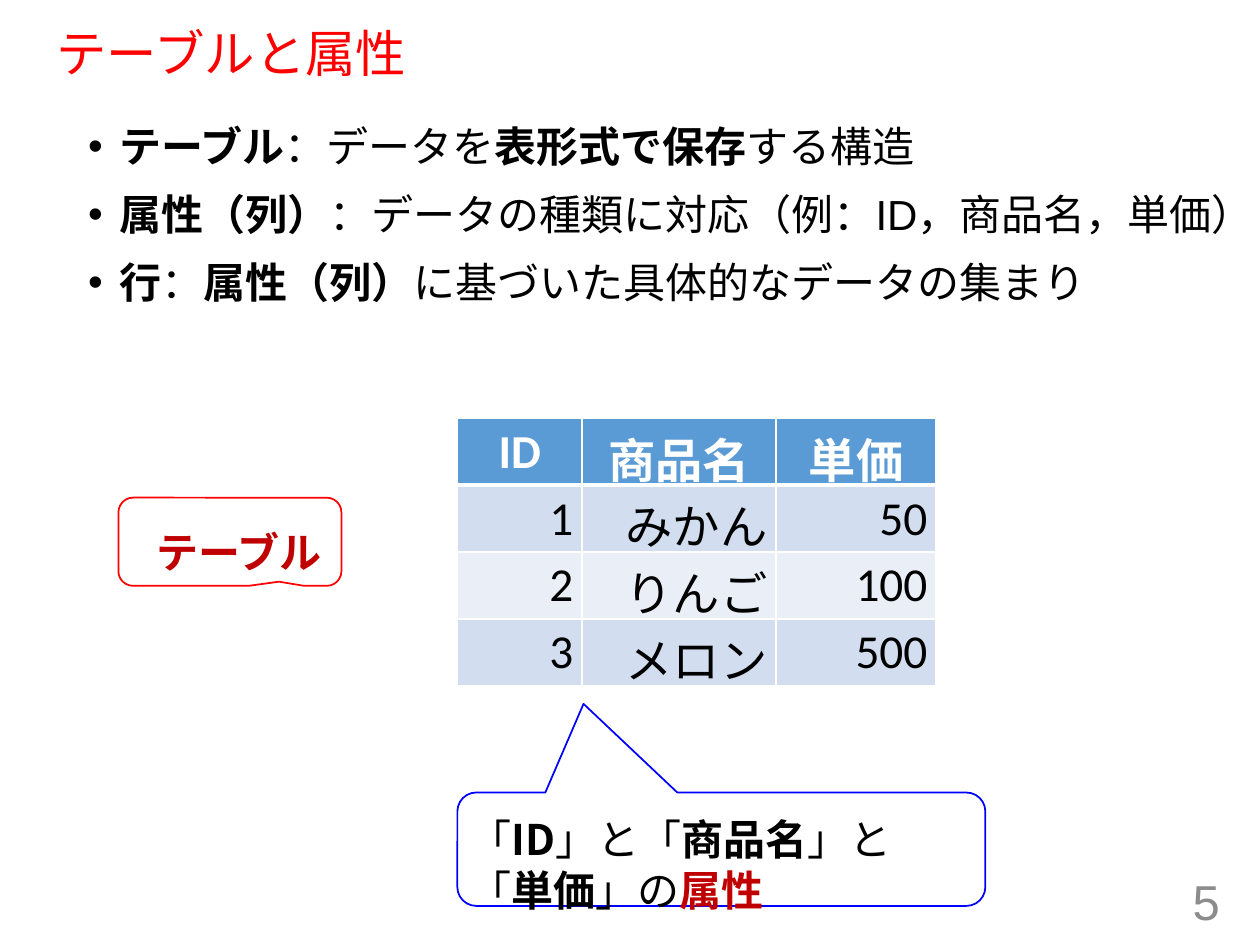
import pptx
import pptx.util
import pptx.dml.color
import pptx.enum.shapes
import pptx.enum.text
import pptx.oxml
import pptx.oxml.ns
import lxml.etree

Inches = pptx.util.Inches
Pt = pptx.util.Pt
ALIGN = pptx.enum.text.PP_ALIGN
ANCHOR = pptx.enum.text.MSO_ANCHOR
qn = pptx.oxml.ns.qn

COLORS = {
    "red": "FF0000", "dark red": "C00000", "blue": "0000FF", "black": "000000",
    "white": "FFFFFF", "gray": "8C8C8C",
    "header": "5B9BD5", "odd row": "D2DEEF", "even row": "EAEFF7",
}
CJK = "Noto Sans CJK JP"

# Each paragraph is a list of (text, bold) or (text, bold, color) runs.
TITLE = [[("テーブルと属性", False)]]
BULLETS = [
    [("テーブル", True), ("：データを", False), ("表形式で保存", True), ("する構造", False)],
    [("属性（列）", True), ("：データの種類に対応（例：ID，商品名，単価）", False)],
    [("行", True), ("：", False), ("属性（列）", True),
     ("に基づいた具体的なデータの集まり", False)],
]
TABLE_LABEL = [[("テーブル", True, "dark red")]]
ATTRIBUTE_LABEL = [[
    ("「", False), ("ID", True), ("」と「", False), ("商品名", True), ("」と「", False),
    ("単価", True), ("」の", False), ("属性", True, "dark red"),
]]
PAGE_NUMBER = [[("5", False)]]
PRODUCTS = [
    ("ID", "商品名", "単価"),
    ("1", "みかん", "50"),
    ("2", "りんご", "100"),
    ("3", "メロン", "500"),
]
COLUMN_WIDTHS = (0.99, 1.54, 1.27)
ROW_HEIGHT = 0.53


def rgb(name):
    return pptx.dml.color.RGBColor.from_string(COLORS[name])


def add_text(slide, box, paragraphs, size, font="Arial", color="black",
             anchor=ANCHOR.TOP, align=ALIGN.LEFT):
    frame = slide.shapes.add_textbox(*map(Inches, box)).text_frame
    frame.word_wrap = True
    frame.vertical_anchor = anchor
    for index, runs in enumerate(paragraphs):
        paragraph = frame.add_paragraph() if index else frame.paragraphs[0]
        paragraph.alignment = align
        paragraph.font.size = Pt(size)
        paragraph.font.name = font
        for text, bold, *run_color in runs:
            run = paragraph.add_run()
            run.text = text
            run.font.size = Pt(size)
            run.font.name = font
            run.font.bold = bold
            run.font.color.rgb = rgb(run_color[0] if run_color else color)
            east_asian = lxml.etree.SubElement(run.font._element, qn("a:ea"))
            east_asian.set("typeface", font)
    return frame


def add_bullet(paragraph):
    paragraph.space_before = Pt(10)
    properties = paragraph._p.get_or_add_pPr()
    properties.set("marL", str(Inches(0.25)))
    properties.set("indent", str(-Inches(0.25)))
    bullet_font = lxml.etree.Element(qn("a:buFont"), typeface="Arial")
    bullet = lxml.etree.Element(qn("a:buChar"), char="•")
    position = list(properties).index(properties.find(qn("a:spcBef"))) + 1
    properties[position:position] = [bullet_font, bullet]


def add_callout(slide, box, pointer, color):
    callout = slide.shapes.add_shape(
        pptx.enum.shapes.MSO_SHAPE.ROUNDED_RECTANGULAR_CALLOUT, *map(Inches, box))
    for index, value in enumerate((*pointer, 0.167)):
        callout.adjustments[index] = value
    callout.shadow.inherit = False
    callout.fill.background()
    callout.line.color.rgb = rgb(color)
    callout.line.width = Pt(1)


def add_borders(cell, bottom):
    properties = cell._tc.get_or_add_tcPr()
    for index, (side, width) in enumerate(
            (("lnL", 1), ("lnR", 1), ("lnT", 1), ("lnB", bottom))):
        line = lxml.etree.Element(qn("a:" + side), w=str(Pt(width)))
        fill = lxml.etree.SubElement(line, qn("a:solidFill"))
        lxml.etree.SubElement(fill, qn("a:srgbClr"), val=COLORS["white"])
        properties.insert(index, line)


def add_product_table(slide, left, top):
    table = slide.shapes.add_table(
        len(PRODUCTS), len(COLUMN_WIDTHS), Inches(left), Inches(top),
        Inches(sum(COLUMN_WIDTHS)), Inches(ROW_HEIGHT * len(PRODUCTS))).table
    for column, width in zip(table.columns, COLUMN_WIDTHS):
        column.width = Inches(width)
    for row_index, values in enumerate(PRODUCTS):
        header = row_index == 0
        fill = "header" if header else ("odd row" if row_index % 2 else "even row")
        table.rows[row_index].height = Inches(ROW_HEIGHT)
        for column_index, value in enumerate(values):
            cell = table.cell(row_index, column_index)
            cell.text = value
            cell.margin_left = cell.margin_right = Inches(0.07)
            cell.margin_top = cell.margin_bottom = Inches(0.04)
            cell.fill.solid()
            cell.fill.fore_color.rgb = rgb(fill)
            add_borders(cell, bottom=3 if header or row_index == 0 else 1)
            paragraph = cell.text_frame.paragraphs[0]
            paragraph.alignment = ALIGN.CENTER if header else ALIGN.RIGHT
            paragraph.font.size = Pt(27)
            paragraph.font.name = "Calibri"
            paragraph.font.bold = header
            paragraph.font.color.rgb = rgb("white" if header else "black")


def main():
    presentation = pptx.Presentation()
    presentation.slide_width = Inches(10)
    presentation.slide_height = Inches(7.5)
    slide = presentation.slides.add_slide(presentation.slide_layouts[6])

    title = add_text(slide, (0.35, 0.19, 9.25, 0.51), TITLE, 28.8, color="red",
                     anchor=ANCHOR.MIDDLE)
    title.paragraphs[0].line_spacing = 0.9
    add_text(slide, (7.53, 6.95, 2.25, 0.4), PAGE_NUMBER, 28, color="gray",
             anchor=ANCHOR.MIDDLE, align=ALIGN.RIGHT)
    add_callout(slide, (3.63, 6.29, 4.19, 0.9), (-0.261, -1.282), "blue")
    add_text(slide, (1.14, 4.13, 1.71, 0.5), TABLE_LABEL, 24, font=CJK)
    add_callout(slide, (0.94, 3.95, 1.77, 0.7), (0.22, 0.453), "red")
    add_text(slide, (3.63, 6.41, 4.19, 0.91), ATTRIBUTE_LABEL, 24, font=CJK)
    add_product_table(slide, 3.63, 3.32)
    body = add_text(slide, (0.6, 0.91, 9.48, 1.76), BULLETS, 24)
    for paragraph in body.paragraphs:
        add_bullet(paragraph)

    presentation.save("out.pptx")


if __name__ == "__main__":
    main()
